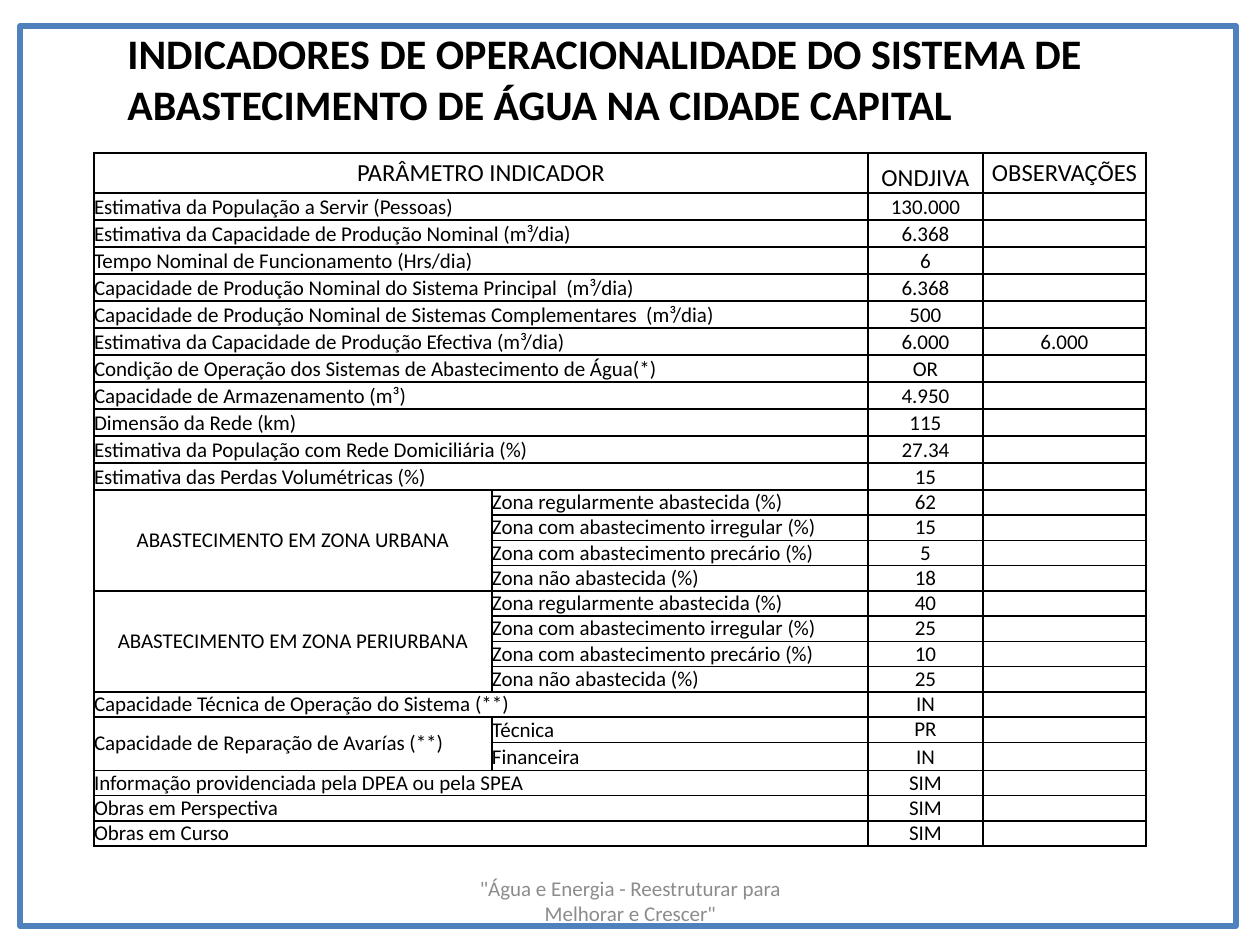
"""Build the slide of water supply indicators for the capital city."""
from dataclasses import dataclass

from lxml import etree
from pptx import Presentation
from pptx import util as u
from pptx.dml.color import RGBColor
from pptx.enum import shapes, text
from pptx.oxml import ns

ALIGN = text.PP_ALIGN
ANCHOR = text.MSO_ANCHOR


@dataclass(frozen=True)
class Theme:
    font: str = "Calibri"
    ink: str = "000000"
    muted: str = "8C8C8C"
    accent: str = "4F81BD"
    title_size: int = 24
    header_size: int = 14
    body_size: int = 12
    rule_width: int = 1
    frame_width: int = 3


@dataclass(frozen=True)
class Box:
    left: int
    top: int
    width: int
    height: int

    def emu(self) -> tuple:
        return tuple(px(n) for n in (self.left, self.top, self.width, self.height))


@dataclass(frozen=True)
class Style:
    size: int
    color: str = "000000"
    bold: bool = False
    align: ALIGN = ALIGN.LEFT
    anchor: ANCHOR = ANCHOR.BOTTOM


@dataclass(frozen=True)
class Indicator:
    label: str
    value: str
    note: str = ""
    height: int = 25
    anchor: ANCHOR = ANCHOR.BOTTOM


@dataclass(frozen=True)
class Group:
    label: str
    members: tuple
    align: ALIGN = ALIGN.CENTER


THEME = Theme()
COLUMNS = (398, 376, 115, 163)
HEADER_HEIGHT = 40
TALL = 27
ZONES = ("Zona regularmente abastecida (%)", "Zona com abastecimento irregular (%)",
         "Zona com abastecimento precário (%)", "Zona não abastecida (%)")


def zone_group(label: str, *values: str) -> Group:
    return Group(label, tuple(map(Indicator, ZONES, values)))


ENTRIES = (
    Indicator("Estimativa da População a Servir (Pessoas)", "130.000", height=TALL),
    Indicator("Estimativa da Capacidade de Produção Nominal (m³/dia)", "6.368", height=TALL),
    Indicator("Tempo Nominal de Funcionamento (Hrs/dia)", "6", height=TALL),
    Indicator("Capacidade de Produção Nominal do Sistema Principal  (m³/dia)", "6.368", height=TALL),
    Indicator("Capacidade de Produção Nominal de Sistemas Complementares  (m³/dia)", "500", height=TALL),
    Indicator("Estimativa da Capacidade de Produção Efectiva (m³/dia)", "6.000", "6.000", TALL),
    Indicator("Condição de Operação dos Sistemas de Abastecimento de Água(*)", "OR", height=TALL),
    Indicator("Capacidade de Armazenamento (m³)", "4.950", height=TALL),
    Indicator("Dimensão da Rede (km)", "115", height=TALL),
    Indicator("Estimativa da População com Rede Domiciliária (%)", "27.34", height=TALL),
    Indicator("Estimativa das Perdas Volumétricas (%)", "15", height=TALL),
    zone_group("ABASTECIMENTO EM ZONA URBANA", "62", "15", "5", "18"),
    zone_group("ABASTECIMENTO EM ZONA PERIURBANA", "40", "25", "10", "25"),
    Indicator("Capacidade Técnica de Operação do Sistema (**)", "IN", anchor=ANCHOR.MIDDLE),
    Group("Capacidade de Reparação de Avarías (**)",
          (Indicator("Técnica", "PR", anchor=ANCHOR.MIDDLE),
           Indicator("Financeira", "IN", height=28)), ALIGN.LEFT),
    Indicator("Informação providenciada pela DPEA ou pela SPEA", "SIM", anchor=ANCHOR.MIDDLE),
    Indicator("Obras em Perspectiva", "SIM"),
    Indicator("Obras em Curso", "SIM"),
)


def px(n: int) -> int:
    return round(n * 914400 / 126)


def write(paragraph, words: str, style: Style) -> None:
    paragraph.alignment = style.align
    run = paragraph.add_run()
    run.text = words
    run.font.name = THEME.font
    run.font.size = u.Pt(style.size)
    run.font.bold = style.bold
    run.font.color.rgb = RGBColor.from_string(style.color)


def add_caption(slide, box: Box, words: str, style: Style) -> None:
    frame = slide.shapes.add_textbox(*box.emu()).text_frame
    frame.word_wrap = True
    frame.vertical_anchor = style.anchor
    write(frame.paragraphs[0], words, style)


def rule_cell(cell) -> None:
    properties = cell._tc.get_or_add_tcPr()
    for side in ("a:lnL", "a:lnR", "a:lnT", "a:lnB"):
        line = etree.SubElement(properties, ns.qn(side), w=str(u.Pt(THEME.rule_width)))
        fill = etree.SubElement(line, ns.qn("a:solidFill"))
        etree.SubElement(fill, ns.qn("a:srgbClr"), val=THEME.ink)
    cell.fill.background()


def prepare_cell(cell) -> None:
    cell.margin_left = cell.margin_right = cell.margin_top = cell.margin_bottom = 0
    rule_cell(cell)
    end = cell.text_frame.paragraphs[0]._p.get_or_add_endParaRPr()
    end.set("sz", str(THEME.body_size * 100))


def fill_cell(cell, words: str, style: Style) -> None:
    cell.vertical_anchor = style.anchor
    if words:
        write(cell.text_frame.paragraphs[0], words, style)


def fill_header(table) -> None:
    middle = Style(THEME.header_size, align=ALIGN.CENTER, anchor=ANCHOR.MIDDLE)
    bottom = Style(THEME.header_size, align=ALIGN.CENTER)
    table.cell(0, 0).merge(table.cell(0, 1))
    fill_cell(table.cell(0, 0), "PARÂMETRO INDICADOR", middle)
    fill_cell(table.cell(0, 2), "ONDJIVA", bottom)
    fill_cell(table.cell(0, 3), "OBSERVAÇÕES", middle)


def fill_indicator(table, row: int, column: int, item: Indicator) -> None:
    centred = Style(THEME.body_size, align=ALIGN.CENTER)
    fill_cell(table.cell(row, column), item.label, Style(THEME.body_size, anchor=item.anchor))
    fill_cell(table.cell(row, 2), item.value, centred)
    fill_cell(table.cell(row, 3), item.note, centred)


def add_indicator_table(slide, left: int, top: int) -> None:
    members = [entry.members if isinstance(entry, Group) else (entry,) for entry in ENTRIES]
    heights = [HEADER_HEIGHT] + [item.height for items in members for item in items]
    box = Box(left, top, sum(COLUMNS), sum(heights))
    table = slide.shapes.add_table(len(heights), len(COLUMNS), *box.emu()).table
    table.first_row = table.horz_banding = False
    for column, width in zip(table.columns, COLUMNS):
        column.width = px(width)
    for row, height in zip(table.rows, heights):
        row.height = px(height)
        for cell in row.cells:
            prepare_cell(cell)
    fill_header(table)
    start = 1
    for entry, items in zip(ENTRIES, members):
        grouped = isinstance(entry, Group)
        if grouped:
            table.cell(start, 0).merge(table.cell(start + len(items) - 1, 0))
            style = Style(THEME.body_size, align=entry.align, anchor=ANCHOR.MIDDLE)
            fill_cell(table.cell(start, 0), entry.label, style)
        else:
            table.cell(start, 0).merge(table.cell(start, 1))
        for row, item in enumerate(items, start):
            fill_indicator(table, row, int(grouped), item)
        start += len(items)


def add_frame(slide, box: Box) -> None:
    border = slide.shapes.add_shape(shapes.MSO_SHAPE.RECTANGLE, *box.emu())
    border.shadow.inherit = False
    border.fill.background()
    border.line.color.rgb = RGBColor.from_string(THEME.accent)
    border.line.width = u.Pt(THEME.frame_width)


def main() -> None:
    deck = Presentation()
    deck.slide_width, deck.slide_height = px(1260), px(945)
    slide = deck.slides.add_slide(deck.slide_layouts[6])
    add_caption(slide, Box(115, 38, 1081, 97),
                "INDICADORES DE OPERACIONALIDADE DO SISTEMA DE ABASTECIMENTO DE ÁGUA NA CIDADE CAPITAL",
                Style(THEME.title_size, THEME.ink, bold=True))
    add_indicator_table(slide, 94, 153)
    add_caption(slide, Box(431, 876, 399, 50),
                '"Água e Energia - Reestruturar para Melhorar e Crescer"',
                Style(THEME.body_size, THEME.muted, align=ALIGN.CENTER, anchor=ANCHOR.MIDDLE))
    add_frame(slide, Box(20, 26, 1216, 900))
    deck.save("out.pptx")


if __name__ == "__main__":
    main()
